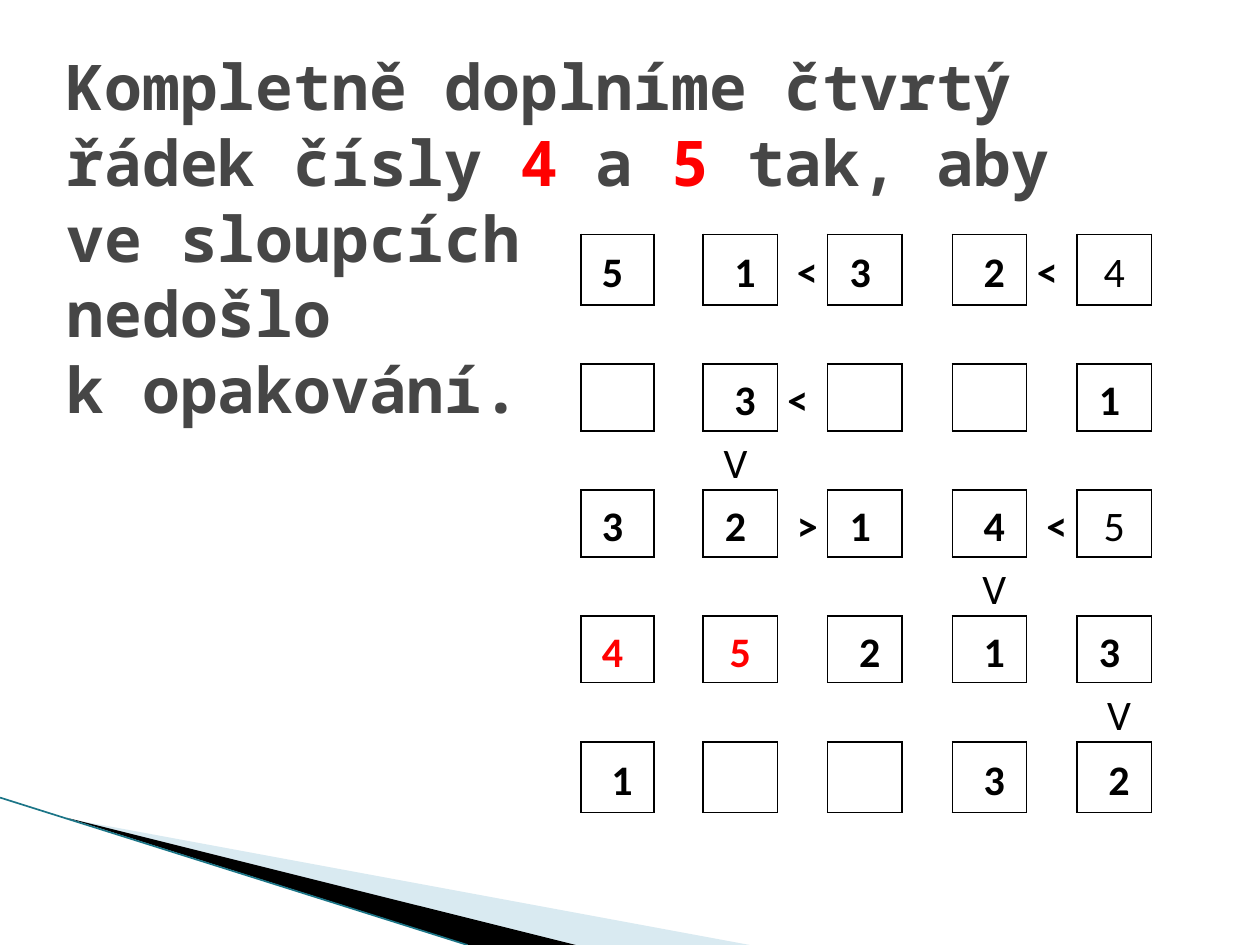
from lxml.etree import SubElement
from pptx import Presentation
from pptx.dml.color import RGBColor
from pptx.enum.shapes import MSO_CONNECTOR
from pptx.enum.text import MSO_ANCHOR, PP_ALIGN
from pptx.oxml.ns import qn
from pptx.util import Inches, Pt

BLACK, GREY, RED = "000000", "464646", "FF0000"
NBSP = chr(160)

TITLE_LINES = [
    [("Kompletně doplníme čtvrtý řádek čísly ", GREY), ("4", RED), (" a ", GREY),
     ("5 ", RED), ("tak, aby", GREY)],
    [("ve sloupcích", GREY)],
    [("nedošlo", GREY)],
    [("k opakování.", GREY)],
]

# An underscore stands for a non-breaking space.
PUZZLE = [
    "5_||_1|_<|3_||_2|<_|4",
    "||||||||",
    "||_3|<_|||||1_",
    "||V_||||||",
    "3_||2_|_>|1_||_4|_<|5",
    "||||||_V||",
    "4_||5||_2||_1||3_",
    "||||||||_V",
    "_1||||||_3||_2",
]
COLUMN_WIDTHS = [0.58, 0.39] + [0.59, 0.4] * 3 + [0.59]
ROW_HEIGHTS = [0.56, 0.47] + [0.53, 0.47] * 3 + [0.56]
RED_CELLS = {(6, 0), (6, 2)}
LIGHT_CELLS = {(0, 8), (3, 2), (4, 8), (5, 6), (7, 8)}


def color(value):
    return RGBColor.from_string(value)


def add_wedge(page, points, fill, opacity=100):
    corners = [(Inches(x), Inches(y)) for x, y in points]
    builder = page.shapes.build_freeform(*corners[0])
    builder.add_line_segments(corners[1:], close=True)
    wedge = builder.convert_to_shape()
    wedge.shadow.inherit = False
    wedge.line.fill.background()
    wedge.fill.solid()
    wedge.fill.fore_color.rgb = color(fill)
    if opacity < 100:
        tint = wedge._element.spPr.find(".//" + qn("a:srgbClr"))
        SubElement(tint, qn("a:alpha"), val=str(opacity * 1000))


def add_line(page, start, end, stroke, width):
    ends = [Inches(value) for value in start + end]
    line = page.shapes.add_connector(MSO_CONNECTOR.STRAIGHT, *ends)
    line.line.color.rgb = color(stroke)
    line.line.width = Pt(width)
    SubElement(line._element.spPr, qn("a:effectLst"))


def fill_title(title):
    title.left, title.top = Inches(0.43), Inches(0.21)
    title.width, title.height = Inches(9.3), Inches(3.94)
    frame = title.text_frame
    frame.word_wrap = True
    frame.vertical_anchor = MSO_ANCHOR.MIDDLE
    frame.margin_bottom = Inches(0.65)
    paragraph = frame.paragraphs[0]
    paragraph.alignment = PP_ALIGN.LEFT
    paragraph.font.name = "Noto Sans Mono"
    paragraph.font.size = Pt(36)
    paragraph.font.bold = True
    for number, line in enumerate(TITLE_LINES):
        if number:
            paragraph.add_line_break()
        for text, ink in line:
            span = paragraph.add_run()
            span.text = text
            span.font.color.rgb = color(ink)


def set_borders(cell, sides, beside, above):
    """Draw the left and right edges if beside, top and bottom if above."""
    properties = cell._tc.get_or_add_tcPr()
    for side in sides:
        visible = beside if side in "LR" else above
        edge = SubElement(properties, qn("a:ln" + side), w=str(Pt(1)))
        if visible:
            fill = SubElement(edge, qn("a:solidFill"))
            SubElement(fill, qn("a:srgbClr"), val=BLACK)
        else:
            SubElement(edge, qn("a:noFill"))


def fill_cell(cell, text, ink, bold):
    cell.vertical_anchor = MSO_ANCHOR.MIDDLE
    cell.margin_left = cell.margin_right = Inches(0.07)
    cell.margin_top = cell.margin_bottom = 0
    cell.fill.background()
    if not text:
        return
    paragraph = cell.text_frame.paragraphs[0]
    paragraph.text = text.replace("_", NBSP)
    paragraph.alignment = PP_ALIGN.CENTER
    paragraph.line_spacing = 1.15
    paragraph.font.name = "Calibri"
    paragraph.font.size = Pt(24)
    paragraph.font.bold = bold
    paragraph.font.color.rgb = color(ink)
    # Table text takes its colour and weight from the table style unless the run sets them.
    span = paragraph.runs[0]
    span.font.bold = bold
    span.font.color.rgb = color(ink)


def add_puzzle(page):
    frame = page.shapes.add_table(
        len(ROW_HEIGHTS), len(COLUMN_WIDTHS), Inches(4.61), Inches(1.86),
        Inches(sum(COLUMN_WIDTHS)), Inches(sum(ROW_HEIGHTS)))
    table = frame.table
    table.first_row = table.horz_banding = False
    for column, width in zip(table.columns, COLUMN_WIDTHS):
        column.width = Inches(width)
    for row, height in zip(table.rows, ROW_HEIGHTS):
        row.height = Inches(height)
    for r, line in enumerate(PUZZLE):
        for c, text in enumerate(line.split("|")):
            cell = table.cell(r, c)
            set_borders(cell, "LRTB", beside=r % 2 == 0, above=c % 2 == 0)
            fill_cell(cell, text, RED if (r, c) in RED_CELLS else BLACK,
                      bold=(r, c) not in LIGHT_CELLS)


def main():
    deck = Presentation()
    deck.slide_width, deck.slide_height = Inches(10), Inches(7.5)
    page = deck.slides.add_slide(deck.slide_layouts[5])
    add_wedge(page, [(0.55, 6.5), (5.95, 7.5), (4.56, 7.5)], "A0CBDC", opacity=40)
    add_wedge(page, [(0.53, 6.49), (4.57, 7.5), (3.72, 7.5)], BLACK)
    add_line(page, (0, 6.33), (3.71, 7.5), "1B7587", 0.95)
    fill_title(page.shapes.title)
    add_puzzle(page)
    deck.save("out.pptx")


if __name__ == "__main__":
    main()
